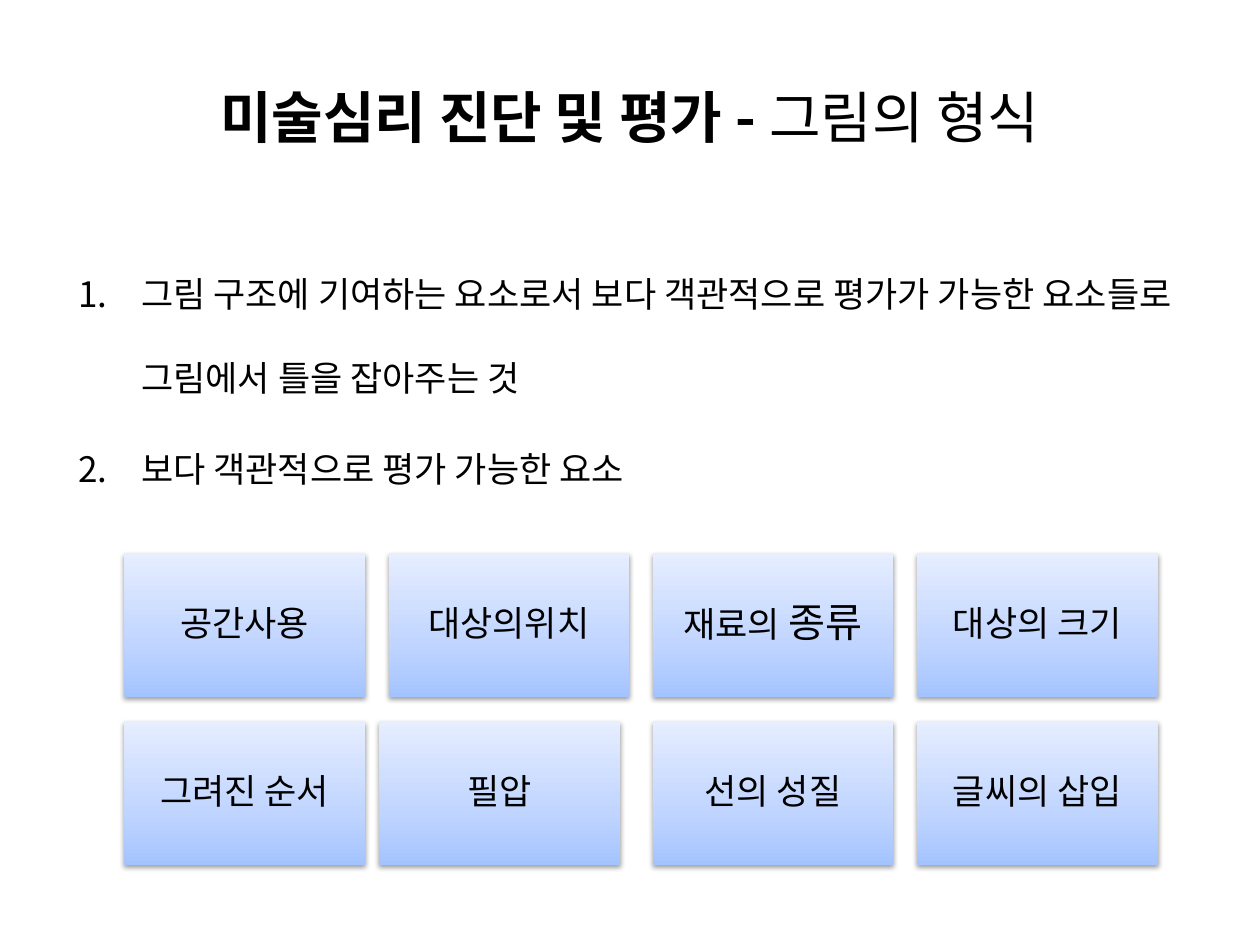
from lxml.etree import SubElement
from pptx import Presentation
from pptx.dml.color import RGBColor
from pptx.enum.shapes import MSO_SHAPE
from pptx.enum.text import MSO_ANCHOR, MSO_AUTO_SIZE, PP_ALIGN
from pptx.oxml import parse_xml
from pptx.oxml.ns import nsdecls, qn
from pptx.util import Pt

FONT = "Noto Sans CJK KR"
COLORS = {
    "text": "000000",
    "shadow": "000000",
    "card_bottom": "A4C4FF",
    "card_middle": "BFD4FF",
    "card_top": "E6EEFF",
}
TITLE = [("미술심리 진단 및 평가 - ", 32, True), ("그림의 형식", 32, False)]
POINTS = [
    "그림 구조에 기여하는 요소로서 보다 객관적으로 평가가 가능한 요소들로 그림에서 틀을 잡아주는 것",
    "보다 객관적으로 평가 가능한 요소",
]
ELEMENTS = [
    [[("공간사용", 20)], [("대상의위치", 20)],
     [("재료의", 20), (" 종류", 23)], [("대상의 크기", 20)]],
    [[("그려진 순서", 20)], [("필압", 20)],
     [("선의 성질", 20)], [("글씨의 삽입", 20)]],
]
# The second card of the lower row sits a little to the left of its column.
NUDGES = {(1, 1): -5.2}


def place(shape, box):
    shape.left, shape.top, shape.width, shape.height = map(Pt, box)


def add_run(paragraph, text, size, bold=False):
    run = paragraph.add_run()
    run.text = text
    font = run.font
    font.name, font.size, font.bold = FONT, Pt(size), bold
    font.color.rgb = RGBColor.from_string(COLORS["text"])
    SubElement(font._element, qn("a:ea"), typeface=FONT)


def fill_title(title, box):
    place(title, box)
    title.text_frame.vertical_anchor = MSO_ANCHOR.MIDDLE
    title.text_frame.auto_size = MSO_AUTO_SIZE.NONE
    heading = title.text_frame.paragraphs[0]
    heading.alignment = PP_ALIGN.CENTER
    for text, size, bold in TITLE:
        add_run(heading, text, size, bold)


def fill_numbered_list(body, box):
    place(body, box)
    frame = body.text_frame
    frame.auto_size = MSO_AUTO_SIZE.NONE
    for index, text in enumerate(POINTS):
        point = frame.add_paragraph() if index else frame.paragraphs[0]
        point.line_spacing = 2.0
        point.space_before = Pt(4)
        properties = point._p.get_or_add_pPr()
        properties.set("marL", str(Pt(36)))
        properties.set("indent", str(Pt(-36)))
        SubElement(properties, qn("a:buFont"), typeface=FONT)
        SubElement(properties, qn("a:buAutoNum"), type="arabicPeriod")
        add_run(point, text, 20)


def set_gradient(shape):
    """Fill with three stops, running upwards."""
    stops = ((0, "card_bottom"), (35, "card_middle"), (100, "card_top"))
    stop_xml = "".join(
        f'<a:gs pos="{position * 1000}"><a:srgbClr val="{COLORS[name]}"/></a:gs>'
        for position, name in stops
    )
    shape.fill.gradient()
    gradient = shape._element.spPr.find(qn("a:gradFill"))
    gradient.getparent().replace(gradient, parse_xml(
        f'<a:gradFill {nsdecls("a")} rotWithShape="1"><a:gsLst>{stop_xml}</a:gsLst>'
        '<a:lin ang="16200000" scaled="0"/></a:gradFill>'
    ))


def set_shadow(shape):
    shape.shadow.inherit = False
    effects = shape._element.spPr.find(qn("a:effectLst"))
    effects.append(parse_xml(
        f'<a:outerShdw {nsdecls("a")} blurRad="{Pt(3.1)}" dist="{Pt(1.6)}" '
        f'dir="5400000" rotWithShape="0"><a:srgbClr val="{COLORS["shadow"]}">'
        '<a:alpha val="38000"/></a:srgbClr></a:outerShdw>'
    ))


def add_card(slide, box, label_runs):
    card = slide.shapes.add_shape(MSO_SHAPE.RECTANGLE, *map(Pt, box))
    card.line.fill.background()
    set_gradient(card)
    set_shadow(card)
    frame = card.text_frame
    frame.word_wrap = True
    frame.vertical_anchor = MSO_ANCHOR.MIDDLE
    frame.margin_left = frame.margin_right = Pt(6)
    frame.margin_top = frame.margin_bottom = Pt(6)
    label = frame.paragraphs[0]
    label.alignment = PP_ALIGN.CENTER
    label.line_spacing = 0.9
    for text, size in label_runs:
        add_run(label, text, size)


def add_card_grid(slide, box, card_width, card_height):
    """Spread the cards evenly so that the outer ones touch the box edges."""
    left, top, width, height = box
    column_step = (width - card_width) / (len(ELEMENTS[0]) - 1)
    row_step = (height - card_height) / (len(ELEMENTS) - 1)
    for row, labels in enumerate(ELEMENTS):
        for column, label_runs in enumerate(labels):
            x = left + column * column_step + NUDGES.get((row, column), 0)
            y = top + row * row_step
            add_card(slide, (x, y, card_width, card_height), label_runs)


def main():
    deck = Presentation()
    deck.slide_width, deck.slide_height = Pt(720), Pt(540)
    slide = deck.slides.add_slide(deck.slide_layouts[1])
    fill_title(slide.shapes.title, (36, 21.6, 648, 90))
    fill_numbered_list(slide.placeholders[1], (37.5, 128, 648, 356.5))
    add_card_grid(slide, (71, 316, 590.5, 178.2), 137.5, 82.2)
    deck.save("out.pptx")


if __name__ == "__main__":
    main()
